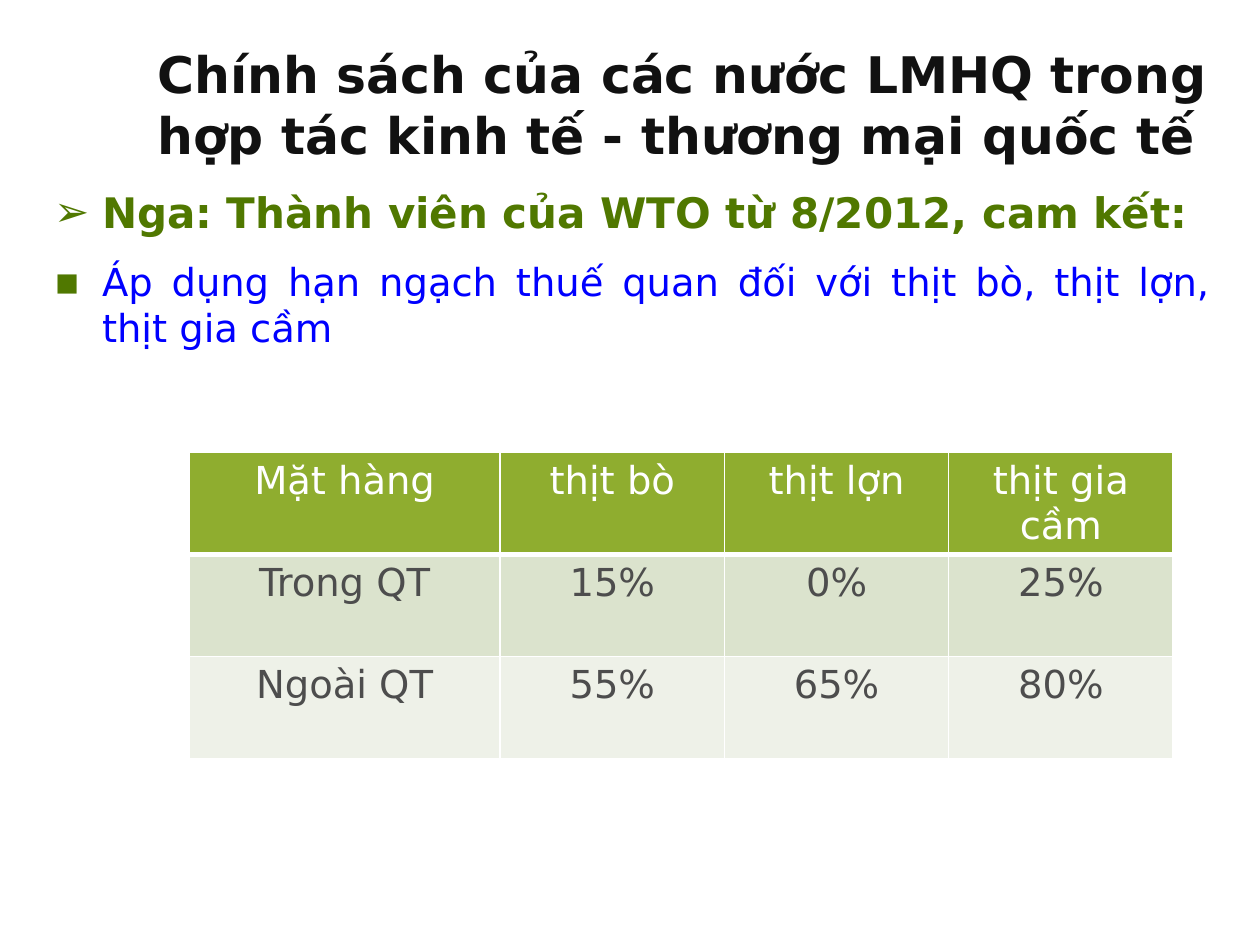
from lxml import etree
from pptx import Presentation
from pptx import util as u
from pptx.dml import color
from pptx.enum import text
from pptx.oxml import ns

FONT = "DejaVu Sans"
INK, GREEN, BLUE, GREY, WHITE = "111111", "507800", "0000FF", "4D4D4D", "FFFFFF"


def rgb(value):
    return color.RGBColor.from_string(value)


def add_element(parent, tag, **attributes):
    return etree.SubElement(parent, ns.qn(tag), **attributes)


class SlideBuilder:
    def __init__(self, presentation):
        self.slide = presentation.slides.add_slide(presentation.slide_layouts[1])

    def style(self, paragraph, size, hue, bold=False):
        font = paragraph.font
        font.name, font.size, font.bold = FONT, u.Pt(size), bold
        font.color.rgb = rgb(hue)

    def place(self, shape, left, top, width, height):
        shape.left, shape.top = u.Inches(left), u.Inches(top)
        shape.width, shape.height = u.Inches(width), u.Inches(height)
        shape.text_frame.auto_size = text.MSO_AUTO_SIZE.NONE

    def title(self, wording, box):
        shape = self.slide.shapes.title
        self.place(shape, *box)
        shape.text_frame.vertical_anchor = text.MSO_ANCHOR.MIDDLE
        paragraph = shape.text_frame.paragraphs[0]
        paragraph.text = wording
        paragraph.alignment = text.PP_ALIGN.LEFT
        self.style(paragraph, 28.8, INK, bold=True)

    def bullets(self, items, box):
        shape = self.slide.placeholders[1]
        self.place(shape, *box)
        frame = shape.text_frame
        for index, (mark, wording, size, hue, bold, space) in enumerate(items):
            paragraph = frame.add_paragraph() if index else frame.paragraphs[0]
            paragraph.text = wording
            paragraph.alignment = text.PP_ALIGN.JUSTIFY
            paragraph.space_before = u.Pt(space)
            self.bullet(paragraph, mark)
            self.style(paragraph, size, hue, bold)

    def bullet(self, paragraph, mark):
        properties = paragraph._p.get_or_add_pPr()
        indent = u.Inches(0.38)
        properties.set("marL", str(indent))
        properties.set("indent", str(-indent))
        add_element(add_element(properties, "a:buClr"), "a:srgbClr", val=GREEN)
        add_element(properties, "a:buFont", typeface=FONT)
        add_element(properties, "a:buChar", char=mark)

    def table(self, rows, fills, left, top, widths, row_height):
        frame = self.slide.shapes.add_table(
            len(rows), len(widths), u.Inches(left), u.Inches(top),
            u.Inches(sum(widths)), u.Inches(row_height * len(rows)))
        table = frame.table
        for column, width in zip(table.columns, widths):
            column.width = u.Inches(width)
        for r, (row, fill) in enumerate(zip(rows, fills)):
            table.rows[r].height = u.Inches(row_height)
            for c, wording in enumerate(row):
                self.cell(table.cell(r, c), wording, fill,
                          hue=GREY if r else WHITE,
                          top_line=3 if r == 1 else 1,
                          bottom_line=1 if r else 3)

    def cell(self, cell, wording, fill, hue, top_line, bottom_line):
        paragraph = cell.text_frame.paragraphs[0]
        paragraph.text = wording
        paragraph.alignment = text.PP_ALIGN.CENTER
        self.style(paragraph, 22, hue)
        # Borders come before the fill in the cell properties
        properties = cell._tc.get_or_add_tcPr()
        for side, width in zip("LRTB", (1, 1, top_line, bottom_line)):
            line = add_element(properties, f"a:ln{side}", w=str(u.Pt(width)))
            add_element(add_element(line, "a:solidFill"), "a:srgbClr", val=WHITE)
        cell.fill.solid()
        cell.fill.fore_color.rgb = rgb(fill)


def main():
    presentation = Presentation()
    presentation.slide_width, presentation.slide_height = u.Inches(10), u.Inches(7.5)
    builder = SlideBuilder(presentation)

    # Heading
    builder.title("Chính sách của các nước LMHQ trong hợp tác kinh tế - "
                  "thương mại quốc tế", (1.15, 0.49, 8.79, 0.67))

    # Commitments
    builder.bullets([
        ("➢", "Nga: Thành viên của WTO từ 8/2012, cam kết:", 24, GREEN, True, 0),
        ("▪", "Áp dụng hạn ngạch thuế quan đối với thịt bò, thịt lợn, thịt gia cầm",
         22, BLUE, False, 12),
    ], (0.33, 1.43, 9.37, 5.8))

    # Tariffs inside and outside the quota
    builder.table([
        ("Mặt hàng", "thịt bò", "thịt lợn", "thịt gia cầm"),
        ("Trong QT", "15%", "0%", "25%"),
        ("Ngoài QT", "55%", "65%", "80%"),
    ], ("8FAD2F", "DBE3CD", "EEF1E8"), 1.5, 3.59, [2.47] + [1.78] * 3, 0.81)

    presentation.save("out.pptx")


if __name__ == "__main__":
    main()
